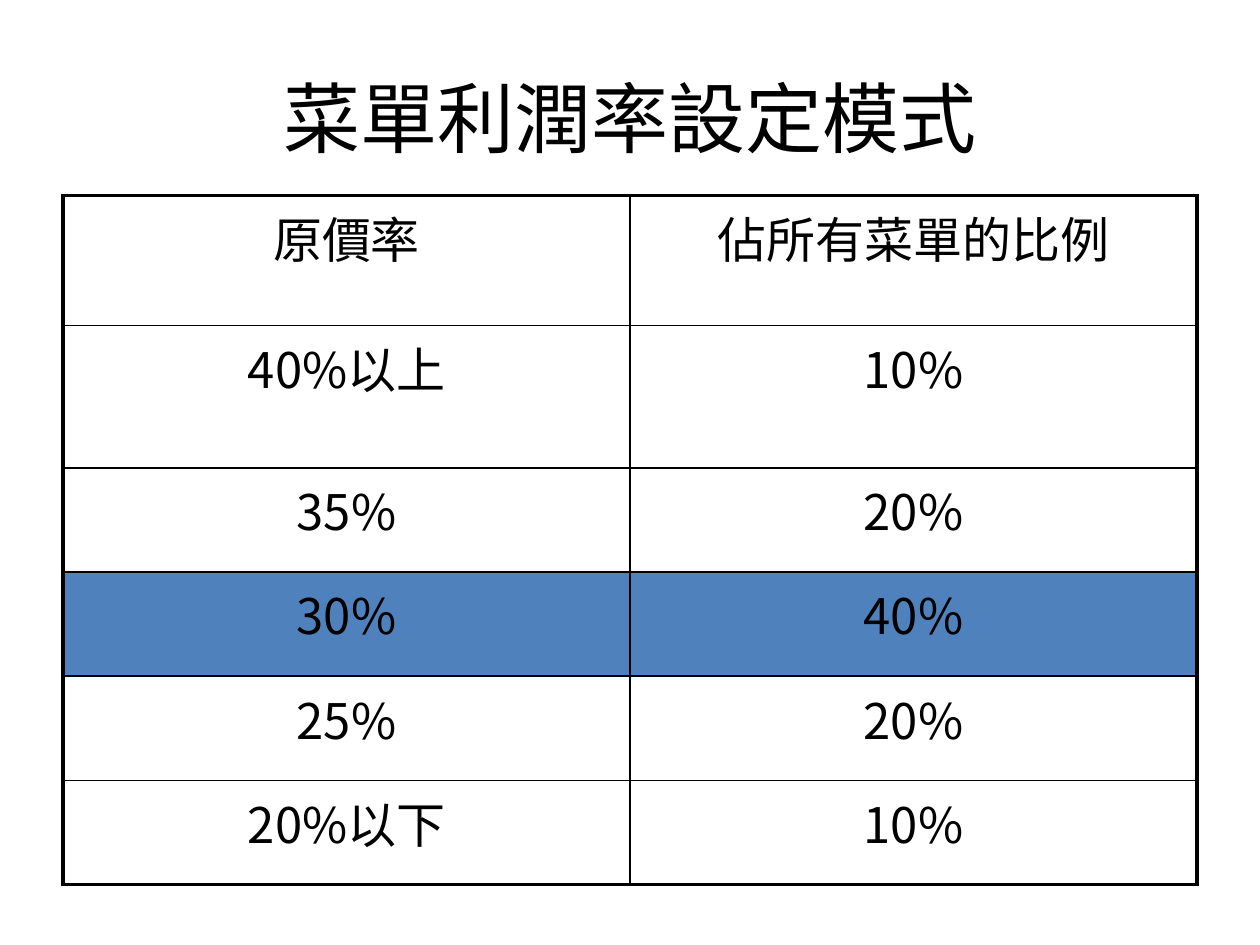
import pptx
import pptx.util
import pptx.dml.color
import pptx.enum.text
import pptx.oxml.ns
import lxml.etree
from pptx.util import Cm

BLACK = "000000"
HIGHLIGHT = "4F81BD"
THIN, THICK = 1, 2.25
BODY_SIZE = 28
ROW_HEIGHTS = [2.62, 2.87, 2.1, 2.1, 2.1, 2.1]
HIGHLIGHT_ROW = 3
RATES = [
    ("原價率", "佔所有菜單的比例"),
    ("40%以上", "10%"),
    ("35%", "20%"),
    ("30%", "40%"),
    ("25%", "20%"),
    ("20%以下", "10%"),
]


def color(hex_code):
    return pptx.dml.color.RGBColor.from_string(hex_code)


def add_text(frame, text, font, size):
    para = frame.paragraphs[0]
    para.alignment = pptx.enum.text.PP_ALIGN.CENTER
    span = para.add_run()
    span.text = text
    span.font.name = font
    span.font.size = pptx.util.Pt(size)
    span.font.bold = False
    span.font.color.rgb = color(BLACK)
    return para


def add_border(cell, side, width):
    qn = pptx.oxml.ns.qn
    properties = cell._tc.get_or_add_tcPr()
    line = lxml.etree.SubElement(properties, qn(f"a:ln{side}"), w=str(pptx.util.Pt(width)))
    fill = lxml.etree.SubElement(line, qn("a:solidFill"))
    lxml.etree.SubElement(fill, qn("a:srgbClr"), val=BLACK)


def place_title(page, left, top, width, height):
    title = page.shapes.title
    title.left, title.top, title.width, title.height = left, top, width, height
    title.text_frame.vertical_anchor = pptx.enum.text.MSO_ANCHOR.MIDDLE
    add_text(title.text_frame, "菜單利潤率設定模式", "Calibri", 44)


def place_rate_table(page, left, top, width, height):
    row_count, column_count = len(RATES), len(RATES[0])
    table = page.shapes.add_table(row_count, column_count, left, top, width, height).table
    table.first_row = False
    table.horz_banding = False
    for column in table.columns:
        column.width = width // column_count
    for row, share in zip(table.rows, ROW_HEIGHTS):
        row.height = int(height * share / sum(ROW_HEIGHTS))

    for r, texts in enumerate(RATES):
        for c, text in enumerate(texts):
            cell = table.cell(r, c)
            font = "Arial" if r == 0 else "Noto Sans CJK SC"
            para = add_text(cell.text_frame, text, font, BODY_SIZE)
            para.space_before = pptx.util.Pt(BODY_SIZE * 0.2)

            # Thick frame around the table, thin lines inside
            outer = {"L": c == 0, "R": c == column_count - 1,
                     "T": r == 0, "B": r == row_count - 1}
            for side, is_outer in outer.items():
                add_border(cell, side, THICK if is_outer else THIN)

            # Only the main cost rate is filled
            if r == HIGHLIGHT_ROW:
                cell.fill.solid()
                cell.fill.fore_color.rgb = color(HIGHLIGHT)
            else:
                cell.fill.background()


def main():
    deck = pptx.Presentation()
    deck.slide_width, deck.slide_height = Cm(25.4), Cm(19.05)
    page = deck.slides.add_slide(deck.slide_layouts[5])
    margin = Cm(1.27)
    width = deck.slide_width - 2 * margin
    place_title(page, margin, Cm(0.76), width, Cm(3.18))
    place_rate_table(page, margin, Cm(3.94), width, Cm(sum(ROW_HEIGHTS)))
    deck.save("out.pptx")


if __name__ == "__main__":
    main()
